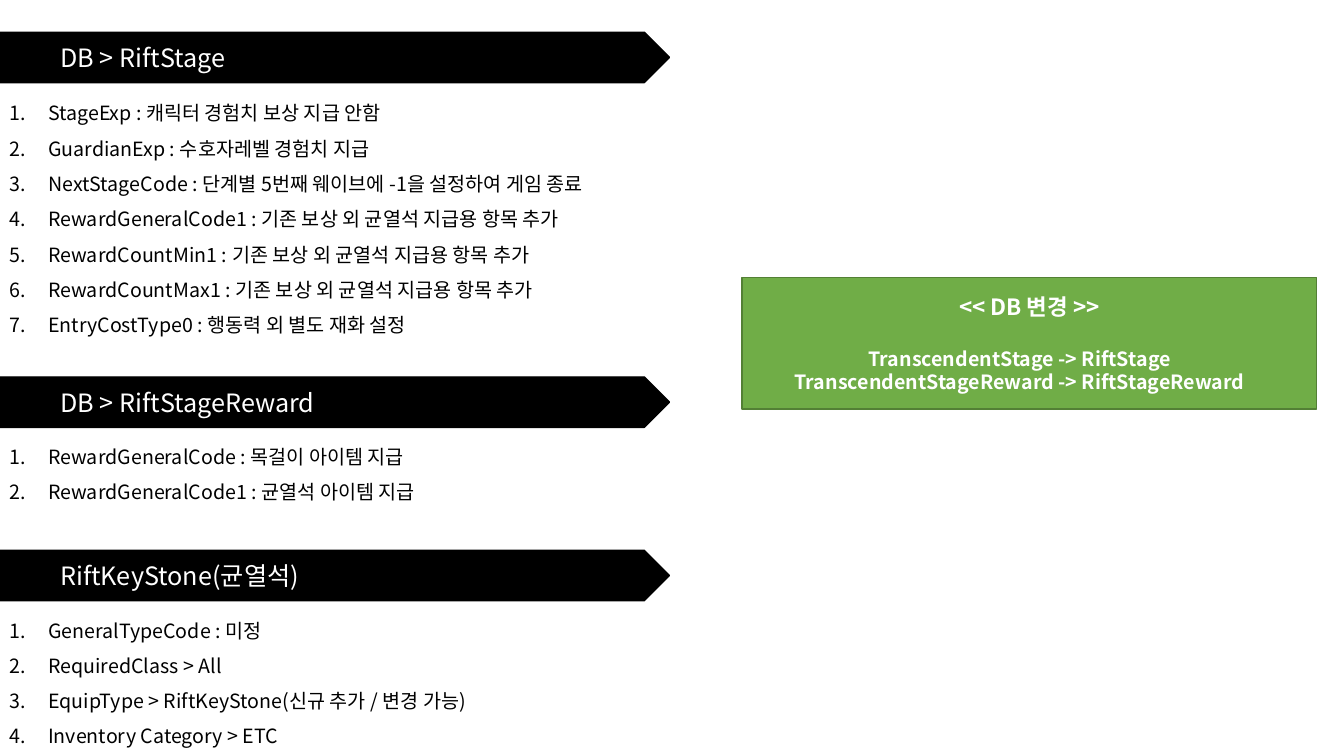
from lxml import etree
from pptx import Presentation
from pptx.dml.color import RGBColor
from pptx.enum import shapes, text
from pptx.oxml.ns import qn
from pptx.util import Inches, Pt

FONT = "Noto Sans CJK KR"
BLACK, WHITE, GREEN, DARK_GREEN = "000000", "FFFFFF", "70AD47", "538035"
BANNER_WIDTH, BANNER_HEIGHT = 6.64, 0.5

# banner top, title, list top, list height, items
SECTIONS = [
    (0.32, "DB > RiftStage", 0.84, 2.53, [
        "StageExp : 캐릭터 경험치 보상 지급 안함",
        "GuardianExp : 수호자레벨 경험치 지급",
        "NextStageCode : 단계별 5번째 웨이브에 -1을 설정하여 게임 종료",
        "RewardGeneralCode1 : 기존 보상 외 균열석 지급용 항목 추가",
        "RewardCountMin1 : 기존 보상 외 균열석 지급용 항목 추가",
        "RewardCountMax1 : 기존 보상 외 균열석 지급용 항목 추가",
        "EntryCostType0 : 행동력 외 별도 재화 설정",
    ]),
    (3.74, "DB > RiftStageReward", 4.25, 0.81, [
        "RewardGeneralCode : 목걸이 아이템 지급",
        "RewardGeneralCode1 : 균열석 아이템 지급",
    ]),
    (5.46, "RiftKeyStone(균열석)", 5.97, 1.51, [
        "GeneralTypeCode : 미정",
        "RequiredClass > All",
        "EquipType > RiftKeyStone(신규 추가 / 변경 가능)",
        "Inventory Category > ETC",
    ]),
]


def color(value):
    return RGBColor.from_string(value)


def write(para, words, size, ink, bold=False):
    """Fill a paragraph, with one font for Latin and Korean letters."""
    para.text = words
    font = para.font
    font.name, font.size, font.bold = FONT, Pt(size), bold
    font.color.rgb = color(ink)
    east_asian = etree.SubElement(font._element, qn("a:ea"))
    east_asian.set("typeface", FONT)


def add_paragraphs(frame, count):
    return [frame.paragraphs[0]] + [frame.add_paragraph() for _ in range(count - 1)]


def add_box(page, kind, left, top, width, height, fill, line):
    box = page.shapes.add_shape(
        kind, Inches(left), Inches(top), Inches(width), Inches(height))
    box.shadow.inherit = False
    box.fill.solid()
    box.fill.fore_color.rgb = color(fill)
    box.line.color.rgb = color(line)
    box.line.width = Pt(1)
    box.text_frame.word_wrap = True
    box.text_frame.vertical_anchor = text.MSO_ANCHOR.MIDDLE
    return box


def add_banner(page, top, title):
    banner = add_box(page, shapes.MSO_SHAPE.PENTAGON, 0, top,
                     BANNER_WIDTH, BANNER_HEIGHT, BLACK, BLACK)
    para = banner.text_frame.paragraphs[0]
    para.alignment = text.PP_ALIGN.LEFT
    write(para, "\t" + title, 18, WHITE)


def add_numbered_list(page, top, width, height, items):
    box = page.shapes.add_textbox(0, Inches(top), width, Inches(height))
    frame = box.text_frame
    frame.word_wrap = True
    frame.auto_size = text.MSO_AUTO_SIZE.SHAPE_TO_FIT_TEXT
    for para, item in zip(add_paragraphs(frame, len(items)), items):
        write(para, item, 14, BLACK)
        para.line_spacing = 1.5
        props = para._p.get_or_add_pPr()
        props.set("marL", str(Inches(0.38)))
        props.set("indent", str(-Inches(0.38)))
        number = etree.Element(qn("a:buAutoNum"), type="arabicPeriod")
        props.find(qn("a:defRPr")).addprevious(number)


def add_change_note(page):
    note = add_box(page, shapes.MSO_SHAPE.RECTANGLE,
                   7.36, 2.75, 5.7, 1.31, GREEN, DARK_GREEN)
    heading, stage, reward = add_paragraphs(note.text_frame, 3)
    write(heading, "<< DB 변경 >>", 16, WHITE, bold=True)
    write(stage, "TranscendentStage -> RiftStage", 14, WHITE, bold=True)
    write(reward, "TranscendentStageReward -> RiftStageReward", 14, WHITE, bold=True)
    for para in (heading, stage, reward):
        para.alignment = text.PP_ALIGN.CENTER
    stage.space_before = Pt(19)
    stage._p.get_or_add_pPr().set("marR", str(Inches(0.19)))


def main():
    deck = Presentation()
    deck.slide_width, deck.slide_height = Inches(13.33), Inches(7.5)
    page = deck.slides.add_slide(deck.slide_layouts[6])
    for banner_top, title, list_top, list_height, items in SECTIONS:
        add_banner(page, banner_top, title)
        add_numbered_list(page, list_top, deck.slide_width, list_height, items)
    add_change_note(page)
    deck.save("out.pptx")


if __name__ == "__main__":
    main()
